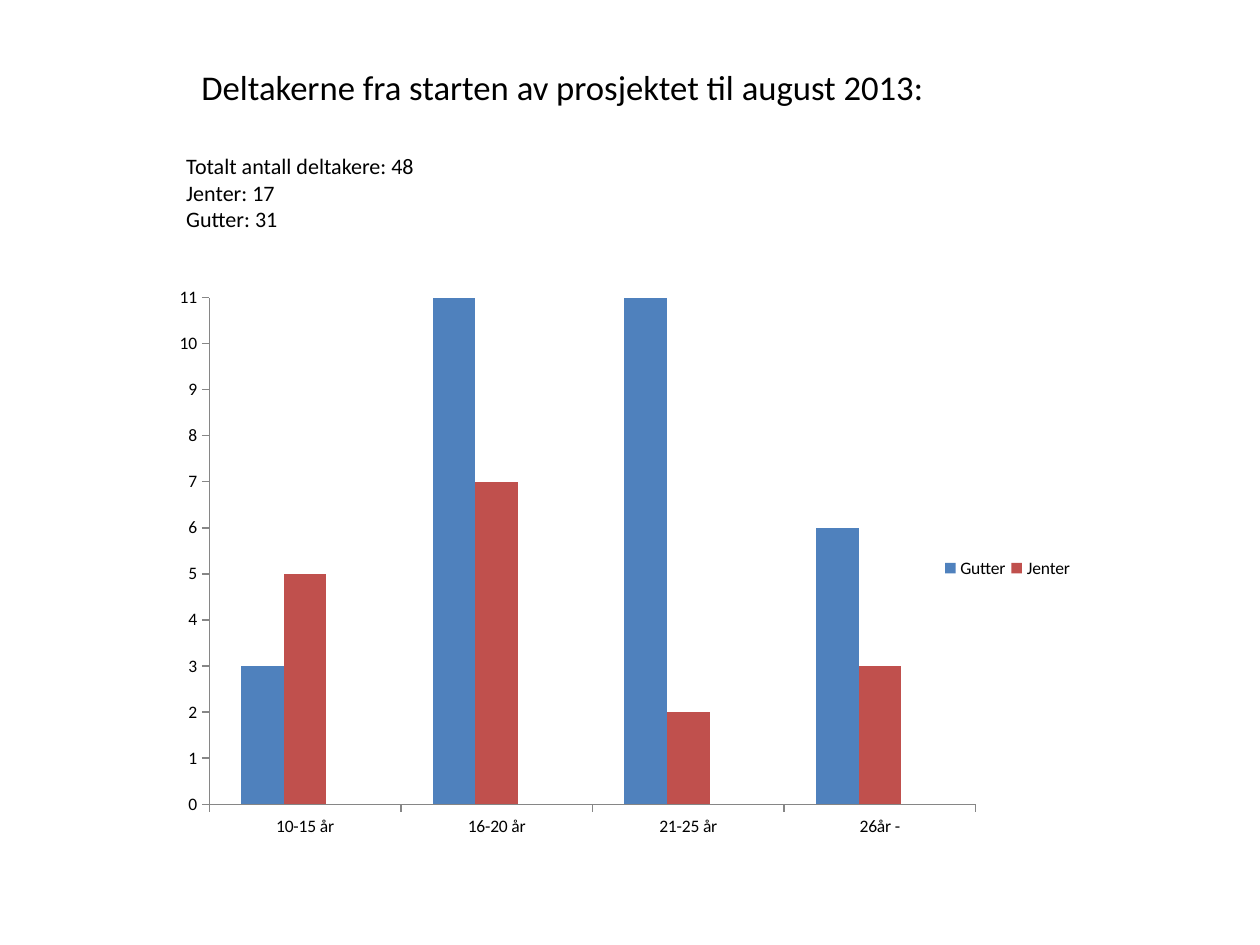
from lxml import etree
from pptx import Presentation
from pptx.chart.data import CategoryChartData
from pptx.dml.color import RGBColor
from pptx.enum.chart import XL_CHART_TYPE as ChartType
from pptx.enum.chart import XL_LEGEND_POSITION as LegendPosition
from pptx.enum.chart import XL_TICK_MARK as TickMark
from pptx.enum.text import MSO_ANCHOR as Anchor
from pptx.enum.text import PP_ALIGN as Align
from pptx.oxml.ns import qn
from pptx.util import Inches, Pt

FONT = "Calibri"
COLORS = {"text": "000000", "axis": "868686",
          "Gutter": "4F81BD", "Jenter": "C0504D", "Series 3": "9BBB59"}
AGE_GROUPS = ["10-15 år", "16-20 år", "21-25 år", "26år -"]
# The empty third series keeps its slot in each cluster
PARTICIPANTS = {"Gutter": [3, 11, 11, 6], "Jenter": [5, 7, 2, 3],
                "Series 3": [None] * 4}
HEADING = "Deltakerne fra starten av prosjektet til august 2013:"
TOTALS = ["Totalt antall deltakere: 48", "Jenter: 17", "Gutter: 31"]


def style_font(font, size):
    values = {"name": FONT, "size": Pt(size), "bold": False}
    for name, value in values.items():
        setattr(font, name, value)
    font.color.rgb = RGBColor.from_string(COLORS["text"])


def add_heading(slide, left, top, width, height):
    """Heading line with the participant totals below it."""
    box = slide.shapes.add_textbox(*map(Inches, (left, top, width, height)))
    frame = box.text_frame
    settings = {"word_wrap": True, "vertical_anchor": Anchor.TOP,
                "margin_left": Inches(0.1), "margin_right": Inches(0.1),
                "margin_top": 0, "margin_bottom": 0}
    for name, value in settings.items():
        setattr(frame, name, value)
    for index, text in enumerate([HEADING] + TOTALS):
        paragraph = frame.paragraphs[0] if index == 0 else frame.add_paragraph()
        paragraph.alignment = Align.LEFT
        run = paragraph.add_run()
        run.text = text
        style_font(run.font, 19.8 if index == 0 else 12.6)
    frame.paragraphs[0]._p.get_or_add_pPr().set("marL", str(Inches(0.12)))
    frame.paragraphs[1].space_before = Pt(26)


def make_layout(inner, **fractions):
    """Manual chart layout, as fractions of the chart box."""
    layout = etree.Element(qn("c:layout"))
    manual = etree.SubElement(layout, qn("c:manualLayout"))
    entries = {"layoutTarget": "inner"} if inner else {}
    entries.update(xMode="edge", yMode="edge", **fractions)
    for name, value in entries.items():
        etree.SubElement(manual, qn(f"c:{name}")).set("val", str(value))
    return layout


def style_axes(chart):
    for axis in (chart.category_axis, chart.value_axis):
        settings = {"has_major_gridlines": False,
                    "major_tick_mark": TickMark.OUTSIDE,
                    "minor_tick_mark": TickMark.NONE}
        for name, value in settings.items():
            setattr(axis, name, value)
        axis.format.line.color.rgb = RGBColor.from_string(COLORS["axis"])
        axis.format.line.width = Pt(0.75)
        style_font(axis.tick_labels.font, 10)
    scale = {"minimum_scale": 0, "maximum_scale": 11, "major_unit": 1}
    for name, value in scale.items():
        setattr(chart.value_axis, name, value)


def style_legend(chart):
    chart.has_legend = True
    legend = chart.legend
    legend.position = LegendPosition.RIGHT
    legend.include_in_layout = False
    style_font(legend.font, 10)
    element = legend._element
    for old in element.findall(qn("c:layout")):
        element.remove(old)
    # Drop the empty series from the legend, then place the legend
    entry = etree.Element(qn("c:legendEntry"))
    etree.SubElement(entry, qn("c:idx")).set("val", "2")
    etree.SubElement(entry, qn("c:delete")).set("val", "1")
    position = element.find(qn("c:legendPos"))
    position.addnext(entry)
    entry.addnext(make_layout(False, x=0.85, y=0.48, w=0.15, h=0.06))


def add_age_chart(slide, left, top, width, height):
    """Clustered columns: participants by age group and sex."""
    data = CategoryChartData()
    data.categories = AGE_GROUPS
    for name, values in PARTICIPANTS.items():
        data.add_series(name, values)
    chart = slide.shapes.add_chart(
        ChartType.COLUMN_CLUSTERED,
        *map(Inches, (left, top, width, height)), data).chart
    chart.has_title = False
    style_font(chart.font, 10)
    plot = chart.plots[0]
    plot.gap_width = 150
    plot.overlap = 0
    plot.vary_by_categories = False
    for series in plot.series:
        series.format.fill.solid()
        series.format.fill.fore_color.rgb = RGBColor.from_string(COLORS[series.name])
    style_axes(chart)
    style_legend(chart)
    plot_area = chart._chartSpace.chart.plotArea
    for old in plot_area.findall(qn("c:layout")):
        plot_area.remove(old)
    plot_area.insert(0, make_layout(True, x=0.05, y=0.04, w=0.84, h=0.88))


def main():
    presentation = Presentation()
    presentation.slide_width = Inches(10)
    presentation.slide_height = Inches(7.5)
    slide = presentation.slides.add_slide(presentation.slide_layouts[6])
    add_heading(slide, 1.38, 0.52, 6.54, 1.34)
    add_age_chart(slide, 1.3, 2.18, 7.24, 4.57)
    presentation.save("out.pptx")


if __name__ == "__main__":
    main()
